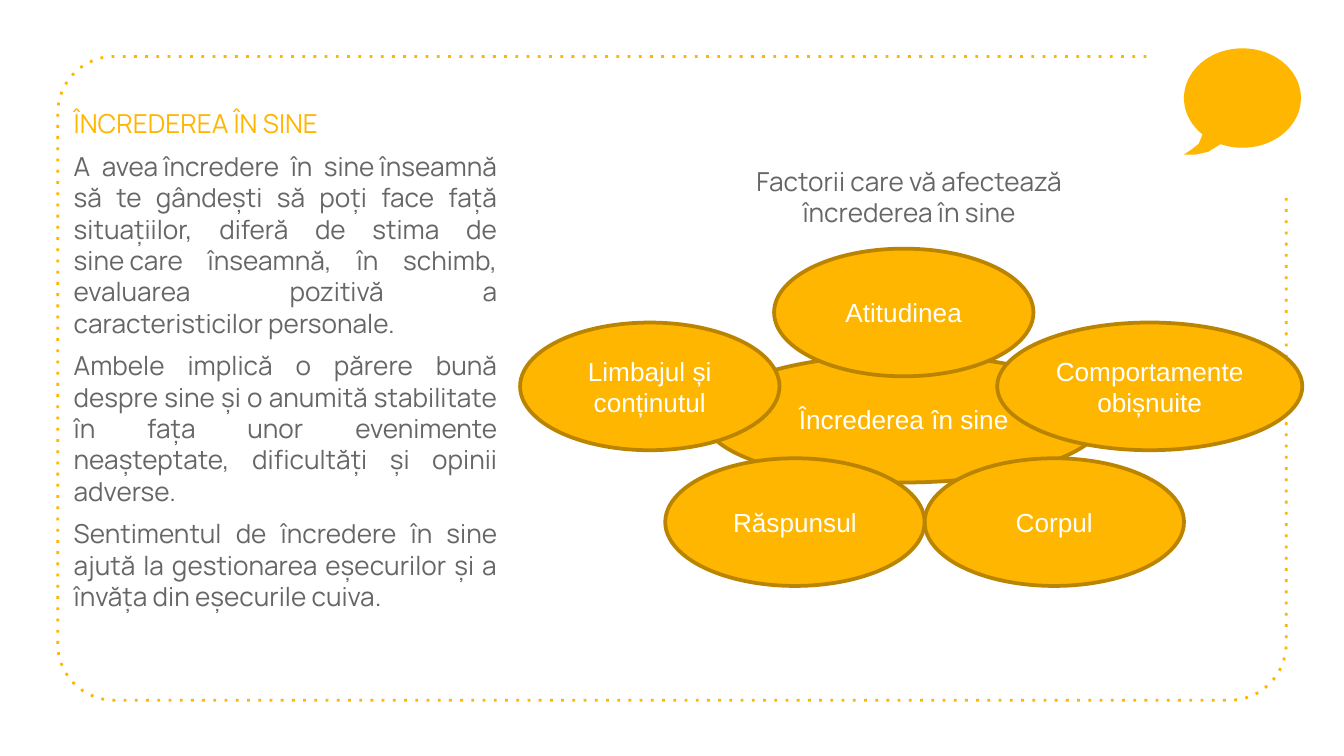
"""Build the self-confidence slide with its cluster of factors."""
from math import cos, radians, sin
from typing import NamedTuple

from pptx import Presentation
from pptx import util as u
from pptx.dml.color import RGBColor
from pptx.enum import dml, shapes, text

PX = 9144
GOLD, BROWN, GREY, WHITE = "FFB600", "BA8400", "666666", "FFFFFF"
ALIGN = text.PP_ALIGN
HARD = chr(160)


class Oval(NamedTuple):
    label: str
    left: int
    top: int
    wide: int = 193
    high: int = 95


class Para(NamedTuple):
    words: str
    color: str = GREY


OVALS = [
    Oval("Încrederea în sine", 524, 264, 297),
    Oval("Atitudinea", 576, 185),
    Oval("Corpul", 688, 341),
    Oval("Limbajul și conținutul", 387, 240),
    Oval("Răspunsul", 495, 341),
    Oval("Comportamente obișnuite", 742, 240, 227),
]
BODY = [
    Para("ÎNCREDEREA ÎN SINE", GOLD),
    Para(f"A avea{HARD}încredere în sine{HARD}înseamnă să te gândești să poți "
         f"face față situațiilor, diferă de stima de sine{HARD}care înseamnă, "
         "în schimb, evaluarea pozitivă a caracteristicilor personale."),
    Para("Ambele implică o părere bună despre sine și o anumită stabilitate "
         "în fața unor evenimente neașteptate, dificultăți și opinii adverse."),
    Para("Sentimentul de încredere în sine ajută la gestionarea eșecurilor "
         "și a învăța din eșecurile cuiva."),
]
TITLE = [Para("Factorii care vă afectează încrederea în sine")]


def paint(item, color: str) -> None:
    """Give a fill or a font one solid colour."""
    if hasattr(item, "solid"):
        item.solid()
        item.fore_color.rgb = RGBColor.from_string(color)
    else:
        item.color.rgb = RGBColor.from_string(color)


def write(frame, paras: list[Para], *, align=ALIGN.CENTER, font="Manrope",
          size=14, before=6, pad=5, anchor=text.MSO_ANCHOR.TOP) -> None:
    """Fill a text frame with formatted paragraphs."""
    frame.word_wrap = True
    frame.vertical_anchor = anchor
    frame.margin_left = frame.margin_right = 10 * PX
    frame.margin_top = frame.margin_bottom = pad * PX
    for i, para in enumerate(paras):
        line = frame.add_paragraph() if i else frame.paragraphs[0]
        line.alignment = align
        line.space_before = u.Pt(before)
        run = line.add_run()
        run.text = para.words
        run.font.name, run.font.size = font, u.Pt(size)
        paint(run.font, para.color)


def arc(x: float, y: float, wide: float, high: float,
        start: int, end: int, steps: int) -> list[tuple[float, float]]:
    """Return points along an elliptical arc, angles in degrees."""
    turns = [radians(start + (end - start) * i / steps)
             for i in range(steps + 1)]
    return [(x + wide * cos(t), y + high * sin(t)) for t in turns]


def trace(slide, points: list[tuple[float, float]], close: bool):
    """Draw a freeform through the points."""
    spots = [(round(x * PX), round(y * PX)) for x, y in points]
    pen = slide.shapes.build_freeform(*spots[0])
    pen.add_line_segments(spots[1:], close=close)
    shape = pen.convert_to_shape()
    shape.shadow.inherit = False
    return shape


def border(slide) -> None:
    """Draw the dotted frame, open at the upper right."""
    points = [(853, 42), *arc(85, 84, 42, 42, 270, 180, 16),
              *arc(85, 479, 42, 42, 180, 90, 16),
              *arc(915, 479, 42, 42, 90, 0, 16), (957, 146)]
    shape = trace(slide, points, False)
    shape.fill.background()
    paint(shape.line.fill, GOLD)
    shape.line.width = u.Pt(1.5)
    shape.line.dash_style = dml.MSO_LINE.ROUND_DOT
    for dash in shape.element.xpath(".//a:prstDash"):
        dash.set("val", "dot")


def bubble(slide) -> None:
    """Draw the speech bubble with its tail."""
    tail = [(892, 107), (887, 111), (881, 115), (890, 115), (899, 113)]
    rim = arc(924.5, 73, 43.5, 37, 112, -227, 90)
    shape = trace(slide, rim + tail, True)
    paint(shape.fill, GOLD)
    shape.line.fill.background()


def oval(slide, item: Oval) -> None:
    """Draw one labelled oval."""
    shape = slide.shapes.add_shape(
        shapes.MSO_SHAPE.OVAL, *(n * PX for n in item[1:]))
    shape.shadow.inherit = False
    paint(shape.fill, GOLD)
    paint(shape.line.fill, BROWN)
    shape.line.width = u.Pt(2)
    write(shape.text_frame, [Para(item.label, WHITE)], font="Arial",
          before=0, anchor=text.MSO_ANCHOR.MIDDLE)


def block(slide, box: tuple[int, ...], paras: list[Para], **style) -> None:
    """Add a text box."""
    shape = slide.shapes.add_textbox(*(n * PX for n in box))
    write(shape.text_frame, paras, **style)


def main() -> None:
    """Build and save the slide."""
    deck = Presentation()
    deck.slide_width = 1000 * PX
    deck.slide_height = deck.slide_width * 9 // 16
    slide = deck.slides.add_slide(deck.slide_layouts[6])
    border(slide)
    block(slide, (45, 70, 335, 421), BODY, align=ALIGN.JUSTIFY, pad=10)
    bubble(slide)
    for item in OVALS:
        oval(slide, item)
    block(slide, (548, 118, 257, 66), TITLE)
    deck.save("out.pptx")


if __name__ == "__main__":
    main()
